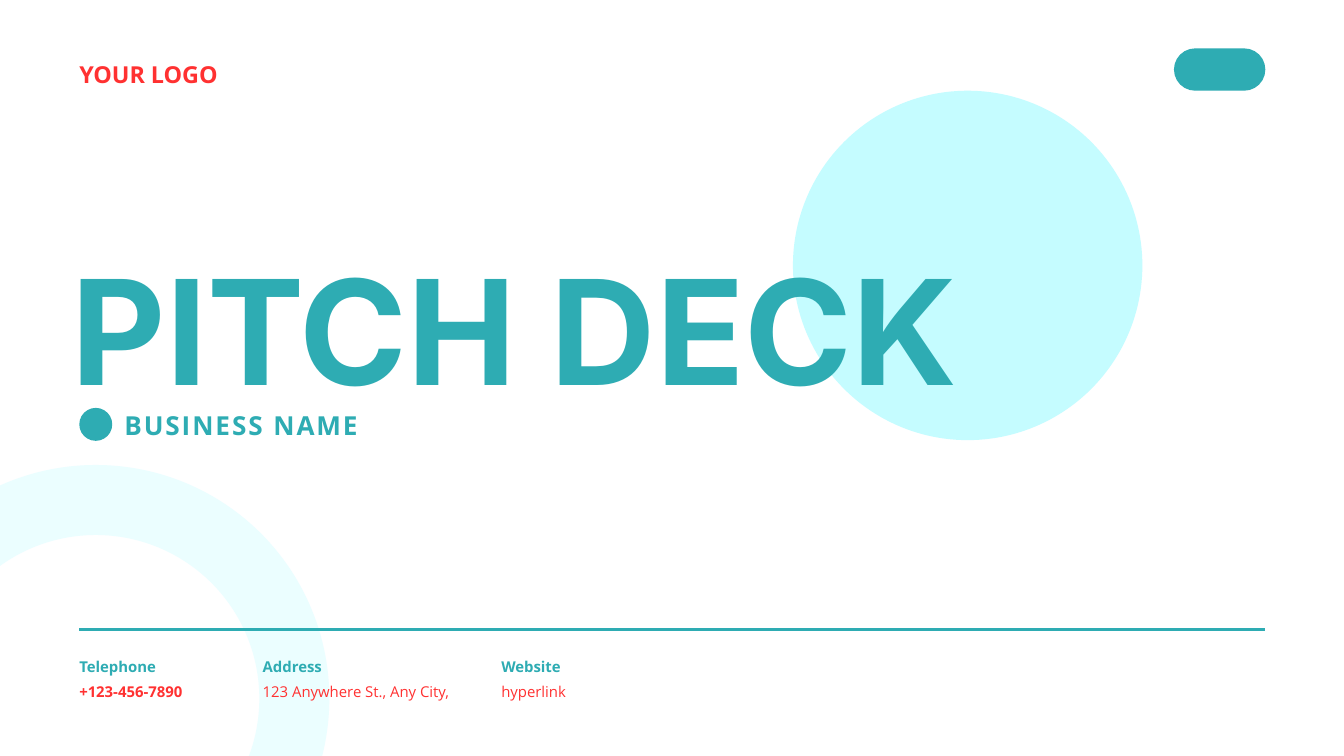
from lxml import etree
from pptx import Presentation
from pptx import util as u
from pptx.dml.color import RGBColor
from pptx.enum import shapes, text
from pptx.oxml.ns import qn

TEAL, RED = "2EACB3", "FF3131"
LEFT, RIGHT = 1.18, 18.82


def paint(color_format, color):
    """Set a fill's or font's colour from a hex string."""
    color_format.rgb = RGBColor.from_string(color)


def add_label(words, left, top, width, height, size, spacing, color,
              font="Open Sans", bold=True, align=text.PP_ALIGN.LEFT):
    """Add a one-line text box without margins; spacing is in points."""
    box = page.shapes.add_textbox(*map(u.Inches, (left, top, width, height)))
    frame = box.text_frame
    frame.margin_left = frame.margin_top = frame.margin_right = frame.margin_bottom = 0
    frame.word_wrap = True
    frame.auto_size = text.MSO_AUTO_SIZE.SHAPE_TO_FIT_TEXT
    para = frame.paragraphs[0]
    para.alignment = align
    para.line_spacing = u.Pt(spacing)
    para.font.name = font
    para.font.size = u.Pt(size)
    para.font.bold = bold
    paint(para.font.color, color)
    span = para.add_run()
    span.text = words
    return span


deck = Presentation()
deck.slide_width, deck.slide_height = u.Inches(20), u.Inches(11.25)
page = deck.slides.add_slide(deck.slide_layouts[6])

# Ring at the lower left
ring = page.shapes.add_shape(
    shapes.MSO_SHAPE.OVAL, *map(u.Inches, (-1.53, 7.44, 5.91, 5.91)))
ring.shadow.inherit = False
ring.fill.background()
paint(ring.line.color, "EBFEFF")
ring.line.width = u.Pt(75)

# Footer rule
rule = page.shapes.add_connector(
    shapes.MSO_CONNECTOR.STRAIGHT,
    u.Inches(LEFT), u.Inches(9.37), u.Inches(RIGHT), u.Inches(9.37))
paint(rule.line.color, TEAL)
rule.line.width = u.Pt(3)
etree.SubElement(rule._element.spPr, qn("a:effectLst"))

# Large disc, bullet dot and corner pill
solids = [
    (shapes.MSO_SHAPE.OVAL, (11.8, 1.35, 5.2, 5.2), "C5FCFF"),
    (shapes.MSO_SHAPE.OVAL, (LEFT, 6.07, 0.49, 0.49), TEAL),
    (shapes.MSO_SHAPE.ROUNDED_RECTANGLE, (17.47, 0.72, 1.36, 0.63), TEAL),
]
for preset, place, color in solids:
    solid = page.shapes.add_shape(preset, *map(u.Inches, place))
    solid.shadow.inherit = False
    solid.fill.solid()
    paint(solid.fill.fore_color, color)
    solid.line.fill.background()
    if preset == shapes.MSO_SHAPE.ROUNDED_RECTANGLE:
        solid.adjustments[0] = 0.5

# Headings
add_label("PITCH DECK", 1.07, 3.14, 15.49, 2.93, 156.2, 218.7, TEAL, font="Inter")
business = add_label("BUSINESS NAME", 1.85, 6.02, 8.82, 0.53, 28, 39.2, TEAL)
business._r.get_or_add_rPr().set("spc", "210")
add_label("YOUR LOGO", LEFT, 0.82, 3.49, 0.46, 25, 35, RED)

# Contact columns
contacts = [
    ("Telephone", "+123-456-7890", LEFT, 2.2, True),
    ("Address", "123 Anywhere St., Any City,", 3.91, 2.98, False),
    ("Website", "hyperlink", 7.46, 3.14, False),
]
for heading, detail, left, width, bold in contacts:
    add_label(heading, left, 9.71, width, 0.32, 16, 24.8, TEAL,
              align=text.PP_ALIGN.JUSTIFY)
    add_label(detail, left, 10.08, width, 0.32, 16, 24.8, RED, bold=bold,
              align=text.PP_ALIGN.JUSTIFY)

deck.save("out.pptx")
